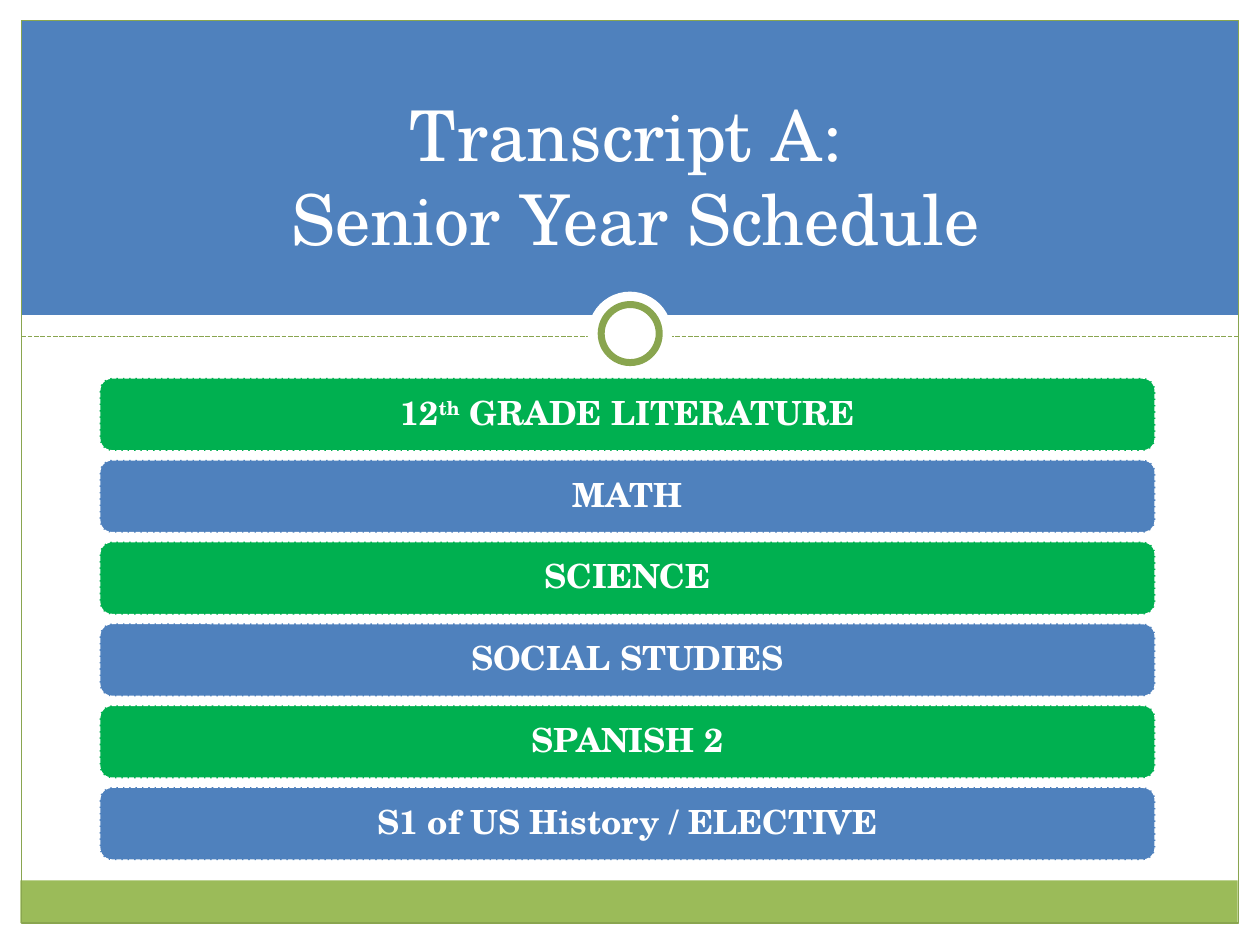
import pptx
import pptx.util
import pptx.dml.color
import pptx.enum.dml
import pptx.enum.shapes
import pptx.enum.text
import lxml.etree

Cm = pptx.util.Cm
Pt = pptx.util.Pt
SHAPES = pptx.enum.shapes.MSO_SHAPE
ANCHOR = pptx.enum.text.MSO_ANCHOR
CENTER = pptx.enum.text.PP_ALIGN.CENTER
DASH = pptx.enum.dml.MSO_LINE.SQUARE_DOT
FONT = "TeX Gyre Schola"
COLORS = {
    name: pptx.dml.color.RGBColor.from_string(value)
    for name, value in {
        "white": "FFFFFF",
        "blue": "4F81BD",
        "green": "00B050",
        "lime": "9BBB59",
        "olive": "89A54F",
    }.items()
}


def add_block(kind, left, top, width, height, fill=None, line=None, weight=0.75):
    block = page.shapes.add_shape(kind, Cm(left), Cm(top), Cm(width), Cm(height))
    block.shadow.inherit = False
    if fill:
        block.fill.solid()
        block.fill.fore_color.rgb = COLORS[fill]
    else:
        block.fill.background()
    if line:
        block.line.color.rgb = COLORS[line]
        block.line.width = Pt(weight)
    else:
        block.line.fill.background()
    return block


def format_text(para, size, bold):
    para.alignment = CENTER
    for span in para.runs:
        span.font.name = FONT
        span.font.size = Pt(size)
        span.font.bold = bold
        span.font.color.rgb = COLORS["white"]


deck = pptx.Presentation()
deck.slide_width = Cm(25.4)
deck.slide_height = Cm(19.05)
page = deck.slides.add_slide(deck.slide_layouts[6])

add_block(SHAPES.RECTANGLE, 0.43, 0.41, 24.54, 5.94, "blue")
add_block(SHAPES.RECTANGLE, 0.41, 17.75, 24.54, 0.86, "lime")
add_block(SHAPES.RECTANGLE, 0.43, 0.42, 24.54, 18.19, line="olive")

divider = page.shapes.add_connector(
    pptx.enum.shapes.MSO_CONNECTOR.STRAIGHT, Cm(0.43), Cm(6.78), Cm(24.97), Cm(6.78)
)
divider.line.color.rgb = COLORS["olive"]
divider.line.width = Pt(0.9)
divider.line.dash_style = DASH
lxml.etree.SubElement(
    divider._element.spPr, pptx.oxml.ns.qn("a:effectLst")
)

add_block(SHAPES.OVAL, 11.85, 5.88, 1.7, 1.7, "white")
add_block(SHAPES.OVAL, 12.12, 6.14, 1.17, 1.17, "white", "olive", 4)

courses = [
    "12",
    "MATH",
    "SCIENCE",
    "SOCIAL STUDIES",
    "SPANISH 2",
    "S1 of US History / ELECTIVE",
]
for index, course in enumerate(courses):
    fill = ("green", "blue")[index % 2]
    bar = add_block(
        SHAPES.ROUNDED_RECTANGLE, 2.01, 7.62 + 1.65 * index, 21.28, 1.47,
        fill, "white", 0.9,
    )
    bar.adjustments[0] = 0.17
    bar.line.dash_style = DASH
    frame = bar.text_frame
    frame.word_wrap = True
    frame.vertical_anchor = ANCHOR.MIDDLE
    frame.margin_left = frame.margin_right = Cm(0.25)
    frame.margin_top = frame.margin_bottom = Cm(0.25)
    para = frame.paragraphs[0]
    para.text = course
    para.line_spacing = 0.9
    if index == 0:
        ordinal = para.add_run()
        ordinal.text = "th"
        ordinal.font._element.set("baseline", "30000")
        para.add_run().text = " GRADE LITERATURE"
    format_text(para, 19, True)

title = page.shapes.add_textbox(Cm(2.01), Cm(1.12), Cm(21.59), Cm(4.24))
title.text_frame.word_wrap = True
title.text_frame.vertical_anchor = ANCHOR.BOTTOM
title.text_frame.text = "Transcript A: \vSenior Year Schedule"
format_text(title.text_frame.paragraphs[0], 40, False)

deck.save("out.pptx")
